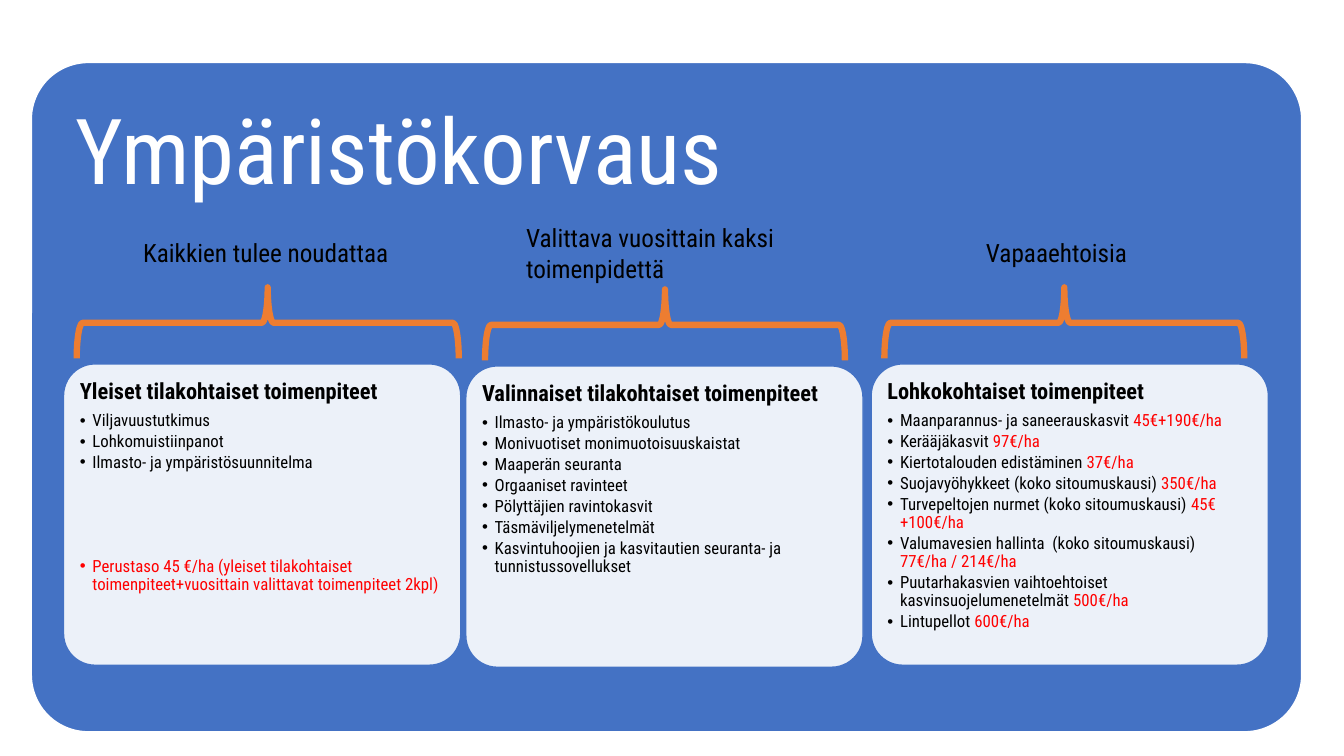
import lxml.etree
import pptx
import pptx.dml.color
import pptx.enum.shapes
import pptx.enum.text
import pptx.oxml.ns
import pptx.util

Pt = pptx.util.Pt
RGBColor = pptx.dml.color.RGBColor
SHAPE = pptx.enum.shapes.MSO_SHAPE
qn = pptx.oxml.ns.qn

BLUE = RGBColor(0x44, 0x72, 0xC4)
ORANGE = RGBColor(0xED, 0x7D, 0x31)
WHITE = RGBColor(0xFF, 0xFF, 0xFF)
BLACK = RGBColor(0, 0, 0)
RED = RGBColor(0xFF, 0, 0)
FONT = "Roboto Condensed"

WIDTH, HEIGHT = pptx.util.Inches(13.33), pptx.util.Inches(7.5)
COL, ROW = WIDTH / 100, HEIGHT / 100

PANEL = (2.33, 8.27, 94.52, 88.53)
COLUMN_W, COLUMN_H = 29.56, 59.2
CARD_Y, BRACE_Y, BRACE_H = 19.33, 9.2, 9.4

COLUMNS = [
    {
        "at": (4.73, 28.8),
        "caption": ("Kaikkien tulee noudattaa", 5.18, 2, 22.58, 5.33),
        "brace": (0.98, 28.43),
        "heading": "Yleiset tilakohtaiset toimenpiteet",
        "items": [
            ("Viljavuustutkimus", ""),
            ("Lohkomuistiinpanot", ""),
            ("Ilmasto- ja ympäristösuunnitelma", ""),
            ("", "Perustaso 45 €/ha (yleiset tilakohtaiset "
                 "toimenpiteet+vuosittain valittavat toimenpiteet 2kpl)"),
        ],
    },
    {
        "at": (34.66, 29.07),
        "caption": ("Valittava vuosittain kaksi toimenpidettä", 3.75, -0.27, 22.21, 9.47),
        "brace": (1.43, 26.78),
        "heading": "Valinnaiset tilakohtaiset toimenpiteet",
        "items": [
            ("Ilmasto- ja ympäristökoulutus", ""),
            ("Monivuotiset monimuotoisuuskaistat", ""),
            ("Maaperän seuranta", ""),
            ("Orgaaniset ravinteet", ""),
            ("Pölyttäjien ravintokasvit", ""),
            ("Täsmäviljelymenetelmät", ""),
            ("Kasvintuhoojien ja kasvitautien seuranta- ja tunnistussovellukset", ""),
        ],
    },
    {
        "at": (64.82, 28.8),
        "caption": ("Vapaaehtoisia", 7.8, 2, 13.2, 5.33),
        "brace": (0.98, 26.78),
        "heading": "Lohkokohtaiset toimenpiteet",
        "items": [
            ("Maanparannus- ja saneerauskasvit ", "45€+190€/ha"),
            ("Kerääjäkasvit ", "97€/ha"),
            ("Kiertotalouden edistäminen ", "37€/ha"),
            ("Suojavyöhykkeet (koko sitoumuskausi) ", "350€/ha"),
            ("Turvepeltojen nurmet (koko sitoumuskausi) ", "45€+100€/ha"),
            ("Valumavesien hallinta  (koko sitoumuskausi) ", "77€/ha / 214€/ha"),
            ("Puutarhakasvien vaihtoehtoiset kasvinsuojelumenetelmät ", "500€/ha"),
            ("Lintupellot ", "600€/ha"),
        ],
    },
]


def grid(x, y, w, h):
    return round(x * COL), round(y * ROW), round(w * COL), round(h * ROW)


def add_run(p, text, size, color, bold=False):
    r = p.add_run()
    r.text = text
    r.font.name = FONT
    r.font.size = Pt(size)
    r.font.bold = bold
    r.font.color.rgb = color


def set_spacing(p, after):
    p.alignment = pptx.enum.text.PP_ALIGN.LEFT
    p.line_spacing = 0.9
    p.space_after = Pt(after)


def add_bullet(p):
    pPr = p._p.get_or_add_pPr()
    pPr.set("marL", "114300")
    pPr.set("indent", "-114300")
    lxml.etree.SubElement(pPr, qn("a:buFont")).set("typeface", "Arial")
    lxml.etree.SubElement(pPr, qn("a:buChar")).set("char", "•")


def add_rounded(slide, box, radius, fill, line, inset):
    sp = slide.shapes.add_shape(SHAPE.ROUNDED_RECTANGLE, *grid(*box))
    sp.shadow.inherit = False
    sp.adjustments[0] = radius
    sp.fill.solid()
    sp.fill.fore_color.rgb = fill
    sp.line.color.rgb = line
    sp.line.width = Pt(1)
    tf = sp.text_frame
    tf.word_wrap = True
    tf.vertical_anchor = pptx.enum.text.MSO_ANCHOR.TOP
    tf.margin_left = tf.margin_right = tf.margin_top = tf.margin_bottom = pptx.util.Inches(inset)
    return sp


def add_panel(slide, box, title):
    sp = add_rounded(slide, box, 0.085, BLUE, WHITE, 0.27)
    p = sp.text_frame.paragraphs[0]
    set_spacing(p, 0)
    add_run(p, title, 65, WHITE)


def add_card(slide, box, heading, items):
    sp = add_rounded(slide, box, 0.105, WHITE, BLUE, 0.07)
    color = sp.fill._xPr.find(qn("a:solidFill"))[0]
    lxml.etree.SubElement(color, qn("a:alpha")).set("val", "90000")
    tf = sp.text_frame
    p = tf.paragraphs[0]
    set_spacing(p, 5.6)
    add_run(p, heading, 16, BLACK, True)
    for name, rate in items:
        p = tf.add_paragraph()
        add_bullet(p)
        set_spacing(p, 2)
        if name:
            add_run(p, name, 12, BLACK)
        else:
            p.space_before = Pt(59)
        if rate:
            add_run(p, rate, 12, RED)


def add_brace(slide, box):
    x, y, w, h = grid(*box)
    sp = slide.shapes.add_shape(
        SHAPE.RIGHT_BRACE, x + (w - h) // 2, y + (h - w) // 2, h, w)
    sp.rotation = 270
    sp.shadow.inherit = False
    sp.fill.background()
    sp.line.color.rgb = ORANGE
    sp.line.width = Pt(4.5)


def add_caption(slide, box, text):
    tf = slide.shapes.add_textbox(*grid(*box)).text_frame
    tf.word_wrap = True
    add_run(tf.paragraphs[0], text, 18, BLACK)


def add_column(slide, box, column):
    x, y, w, h = box
    add_card(slide, (x, y + CARD_Y, w, h - CARD_Y), column["heading"], column["items"])
    brace_x, brace_w = column["brace"]
    add_brace(slide, (x + brace_x, y + BRACE_Y, brace_w, BRACE_H))
    text, dx, dy, caption_w, caption_h = column["caption"]
    add_caption(slide, (x + dx, y + dy, caption_w, caption_h), text)


def main():
    prs = pptx.Presentation()
    prs.slide_width, prs.slide_height = WIDTH, HEIGHT
    slide = prs.slides.add_slide(prs.slide_layouts[6])
    add_panel(slide, PANEL, "Ympäristökorvaus")
    for column in COLUMNS:
        add_column(slide, (*column["at"], COLUMN_W, COLUMN_H), column)
    prs.save("out.pptx")


if __name__ == "__main__":
    main()
